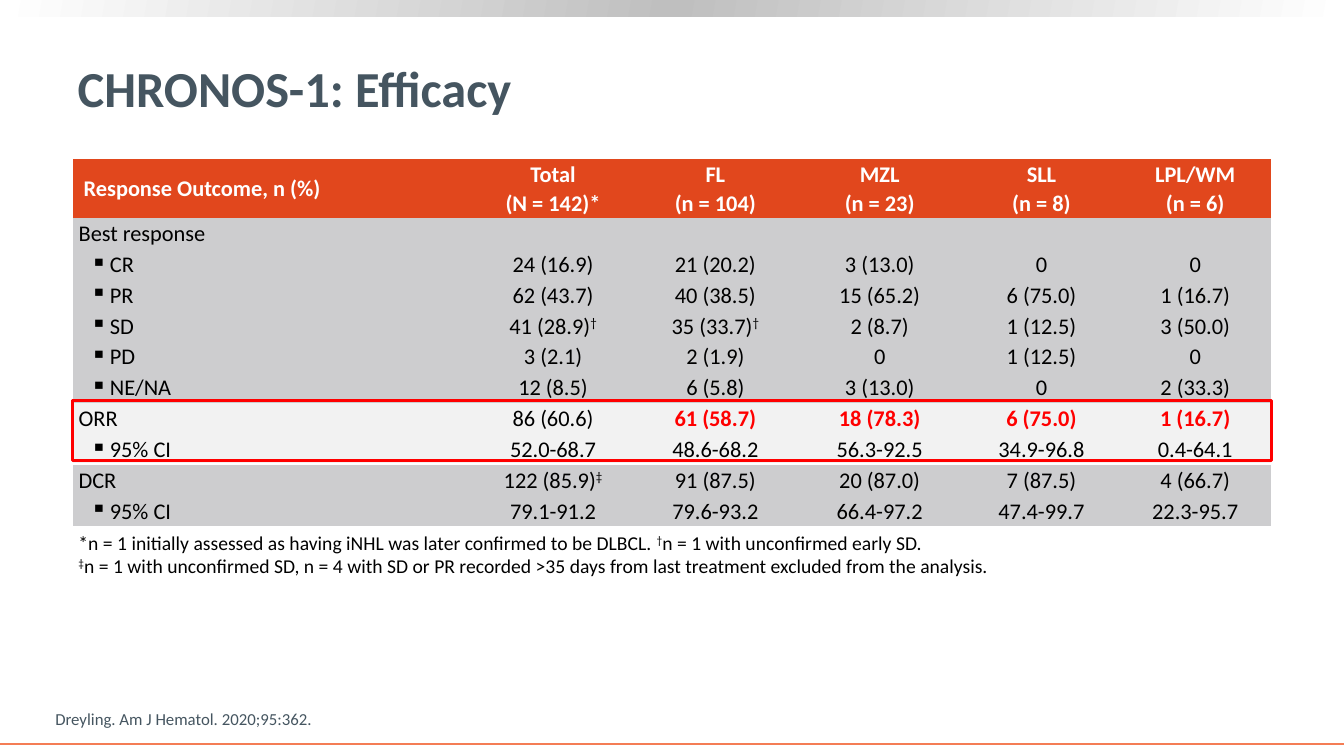
from copy import deepcopy
from itertools import groupby

from lxml import etree
from pptx import Presentation
from pptx import util as u
from pptx.dml.color import RGBColor
from pptx.enum import shapes, text
from pptx.oxml.ns import qn

# Content
TITLE = "CHRONOS-1: Efficacy"
HEAD = ["\u00a0Response Outcome, n (%)", "Total\n(N = 142)*", "FL\n(n = 104)",
        "MZL\n(n = 23)", "SLL\n(n = 8)", "LPL/WM\n(n = 6)"]
ROWS = [
    ["Best response", "", "", "", "", ""],
    ["CR", "24 (16.9)", "21 (20.2)", "3 (13.0)", "0", "0"],
    ["PR", "62 (43.7)", "40 (38.5)", "15 (65.2)", "6 (75.0)", "1 (16.7)"],
    ["SD", "41 (28.9)†", "35 (33.7)†", "2 (8.7)", "1 (12.5)", "3 (50.0)"],
    ["PD", "3 (2.1)", "2 (1.9)", "0", "1 (12.5)", "0"],
    ["NE/NA", "12 (8.5)", "6 (5.8)", "3 (13.0)", "0", "2 (33.3)"],
    ["ORR", "86 (60.6)", "61 (58.7)", "18 (78.3)", "6 (75.0)", "1 (16.7)"],
    ["95% CI", "52.0-68.7", "48.6-68.2", "56.3-92.5", "34.9-96.8", "0.4-64.1"],
    ["DCR", "122 (85.9)‡", "91 (87.5)", "20 (87.0)", "7 (87.5)", "4 (66.7)"],
    ["95% CI", "79.1-91.2", "79.6-93.2", "66.4-97.2", "47.4-99.7", "22.3-95.7"],
]
GROUPS = {"Best response", "ORR", "DCR"}
NOTES = [
    "*n = 1 initially assessed as having iNHL was later confirmed to be DLBCL. "
    "†n = 1 with unconfirmed early SD.",
    "‡n = 1 with unconfirmed SD, n = 4 with SD or PR recorded >35 days from last "
    "treatment excluded from the analysis.",
]
CITE = ["Dreyling. Am J Hematol. 2020;95:362."]

# Format
WHITE = RGBColor(0xFF, 0xFF, 0xFF)
BLACK = RGBColor(0, 0, 0)
RED = RGBColor(0xFF, 0, 0)
SLATE = RGBColor(0x45, 0x55, 0x60)
ORANGE = RGBColor(0xE1, 0x47, 0x1D)
CORAL = RGBColor(0xF4, 0x7D, 0x55)
SILVER = RGBColor(0xBF, 0xBF, 0xBF)
GRAY = RGBColor(0xCD, 0xCD, 0xCF)
PALE = RGBColor(0xF2, 0xF2, 0xF2)
MARKS = "†‡"
PLAIN = "{2D5ABB26-0587-4C30-8999-92F81FD0307C}"
MID, LOW = text.MSO_ANCHOR.MIDDLE, text.MSO_ANCHOR.BOTTOM
LEFT, MIDDLE = text.PP_ALIGN.LEFT, text.PP_ALIGN.CENTER

# Layout, 100 px to the inch
WIDTH, HEIGHT = 1333, 750
COLS = [395, 163, 159, 167, 154, 151]
TOP, SIDE, HEAD_H, BODY_H = 158, 72, 58, 306


def px(n):
    return u.Emu(round(n * 9144))


def box(*at):
    return [px(n) for n in at]


def put(obj, **vals):
    for name, val in vals.items():
        setattr(obj, name, val)


def write(para, words, size, color, bold=False):
    """Add runs, raising the footnote marks and breaking lines."""
    for i, line in enumerate(words.split("\n")):
        if i:
            para.add_line_break()
        for mark, part in groupby(line, lambda c: c in MARKS):
            run = para.add_run()
            run.text = "".join(part)
            put(run.font, size=u.Pt(size), name="Calibri", bold=bold)
            run.font.color.rgb = color
            if mark:
                run.font._element.set("baseline", "30000")
    for br in para._p.findall(qn("a:br")):
        br.append(deepcopy(para.runs[0].font._element))


def note(lines, at, size, color):
    frame = slide.shapes.add_textbox(*box(*at)).text_frame
    put(frame, word_wrap=True, vertical_anchor=LOW)
    for i, line in enumerate(lines):
        para = frame.add_paragraph() if i else frame.paragraphs[0]
        write(para, line, size, color)


def bullet(para):
    props = para._p.get_or_add_pPr()
    props.set("marL", str(px(31)))
    props.set("indent", str(px(-19)))
    etree.SubElement(props, qn("a:buChar")).set("char", "▪")


def rule(cell):
    """White line under a cell."""
    line = etree.Element(qn("a:lnB"), w=str(u.Pt(1.5)))
    fill = etree.SubElement(line, qn("a:solidFill"))
    etree.SubElement(fill, qn("a:srgbClr")).set("val", str(WHITE))
    cell._tc.get_or_add_tcPr().insert(0, line)


prs = Presentation()
put(prs, slide_width=px(WIDTH), slide_height=px(HEIGHT))
slide = prs.slides.add_slide(prs.slide_layouts[5])

# Top band and bottom line
band = slide.shapes.add_shape(shapes.MSO_SHAPE.RECTANGLE, *box(0, 0, WIDTH, 16))
band.shadow.inherit = False
band.line.fill.background()
band.fill.gradient()
band.fill.gradient_angle = 170
stops = band.fill._xPr.find(qn("a:gradFill")).find(qn("a:gsLst"))
stops.append(deepcopy(stops[0]))
for stop, color, spot in zip(band.fill.gradient_stops, (WHITE, SILVER, WHITE), (0, 0.5, 1)):
    stop.color.rgb = color
    stop.position = spot

base = slide.shapes.add_connector(shapes.MSO_CONNECTOR.STRAIGHT, *box(0, 738, WIDTH, 738))
base.line.color.rgb = CORAL
base.line.width = u.Pt(1.5)
etree.SubElement(base._element.spPr, qn("a:effectLst"))

# Title
title = slide.shapes.title
put(title, **dict(zip(("left", "top", "width", "height"), box(67, 26, 1189, 121))))
put(title.text_frame, vertical_anchor=MID, word_wrap=True)
title.text_frame.paragraphs[0].alignment = LEFT
write(title.text_frame.paragraphs[0], TITLE, 36, SLATE, True)

# Response table
frame = slide.shapes.add_table(len(ROWS) + 1, len(COLS),
                               *box(SIDE, TOP, sum(COLS), HEAD_H + BODY_H))
table = frame.table
table._tbl.tblPr.find(qn("a:tableStyleId")).text = PLAIN
for col, wide in zip(table.columns, COLS):
    col.width = px(wide)
for r, row in enumerate([HEAD] + ROWS):
    table.rows[r].height = px(BODY_H / len(ROWS) if r else HEAD_H)
    orr = r in (7, 8)
    for c, words in enumerate(row):
        cell = table.cell(r, c)
        put(cell, margin_left=px(6), margin_right=px(6), margin_top=0,
            margin_bottom=0, vertical_anchor=MID)
        cell.fill.solid()
        cell.fill.fore_color.rgb = ORANGE if r == 0 else PALE if orr else GRAY
        if r == 8:
            rule(cell)
        if not words:
            continue
        para = cell.text_frame.paragraphs[0]
        put(para, alignment=MIDDLE if c else LEFT, line_spacing=1.06)
        if r and c == 0 and words not in GROUPS:
            bullet(para)
        hot = r == 7 and c > 1
        write(para, words, 16, WHITE if r == 0 else RED if hot else BLACK, r == 0 or hot)

# Frame around the ORR rows
mark = slide.shapes.add_shape(shapes.MSO_SHAPE.RECTANGLE, *box(SIDE, 397, sum(COLS), 60))
mark.shadow.inherit = False
mark.fill.background()
mark.line.color.rgb = RED
mark.line.width = u.Pt(2)

# Footnotes and citation
note(NOTES, (68, 521, 1201, 57), 14, BLACK)
note(CITE, (45, 698, 965, 30), 12, SLATE)

prs.save("out.pptx")
